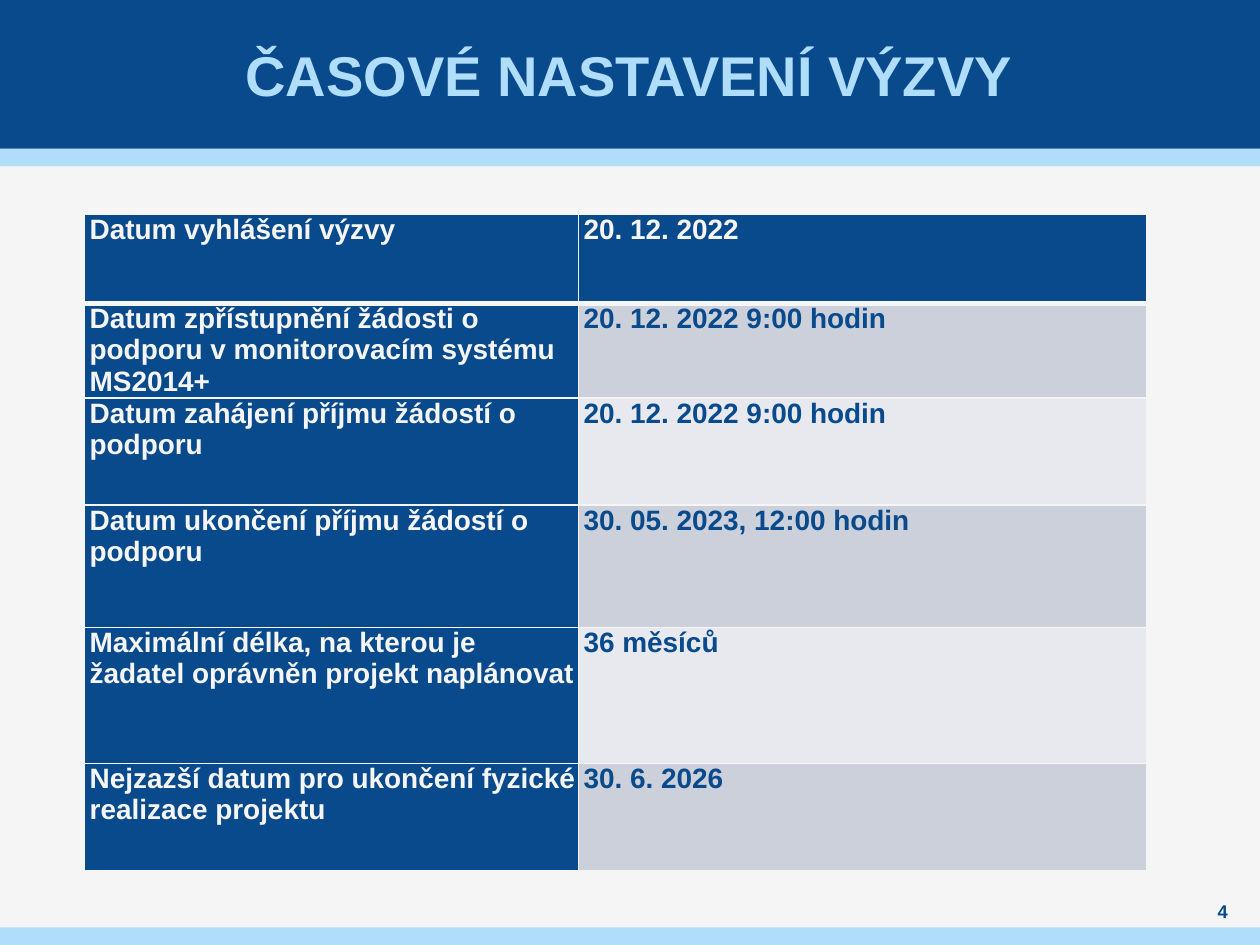
from lxml.etree import SubElement
from pptx import Presentation
from pptx.dml.color import RGBColor
from pptx.enum.shapes import MSO_SHAPE as Shape
from pptx.enum.text import MSO_ANCHOR as Anchor, MSO_AUTO_SIZE as AutoSize, PP_ALIGN as Align
from pptx.oxml.ns import qn
from pptx.util import Pt

NAVY = RGBColor(0x08, 0x4A, 0x8B)
SKY = RGBColor(0xAF, 0xDD, 0xFA)
PAPER = RGBColor(0xF5, 0xF5, 0xF5)
GREY = RGBColor(0xCC, 0xD0, 0xDA)
PALE = RGBColor(0xE7, 0xE9, 0xEE)

WIDTH, HEIGHT = 720, 540
HEADER, STRIPE = 85, 10
COLUMNS = [282.24, 324.72]
ROWS = [
    (51.12, "Datum vyhlášení výzvy", "20. 12. 2022"),
    (54, "Datum zpřístupnění žádosti o podporu v monitorovacím systému MS2014+",
     "20. 12. 2022 9:00 hodin"),
    (61.2, "Datum zahájení příjmu žádostí o podporu", "20. 12. 2022 9:00 hodin"),
    (69.84, "Datum ukončení příjmu žádostí o podporu", "30. 05. 2023, 12:00 hodin"),
    (77.76, "Maximální délka, na kterou je žadatel oprávněn projekt naplánovat", "36 měsíců"),
    (61.2, "Nejzazší datum pro ukončení fyzické realizace projektu", "30. 6. 2026"),
]


class SlideBuilder:
    font = "Arial"

    def __init__(self, page):
        self.page = page
        page.background.fill.solid()
        page.background.fill.fore_color.rgb = PAPER

    def place(self, item, left, top, width, height):
        item.left, item.top = Pt(left), Pt(top)
        item.width, item.height = Pt(width), Pt(height)

    def span(self, para, text, size, color):
        span = para.add_run()
        span.text = text
        span.font.name, span.font.size, span.font.bold = self.font, Pt(size), True
        span.font.color.rgb = color

    def centered(self, box, text, size, color, side=0):
        frame = box.text_frame
        frame.auto_size, frame.word_wrap = AutoSize.NONE, True
        frame.vertical_anchor = Anchor.MIDDLE
        frame.margin_left = frame.margin_right = Pt(side)
        frame.margin_top = frame.margin_bottom = 0
        para = frame.paragraphs[0]
        para.alignment = Align.CENTER
        self.span(para, text, size, color)

    def band(self, top, height, color):
        band = self.page.shapes.add_shape(Shape.RECTANGLE, 0, Pt(top), Pt(WIDTH), Pt(height))
        band.shadow.inherit = False
        band.fill.solid()
        band.fill.fore_color.rgb = color
        band.line.fill.background()

    def title(self, text, *bounds):
        title = self.page.shapes.title
        self.place(title, *bounds)
        self.centered(title, text, 32, SKY, side=3)
        # Bring the title in front of the bands
        title.element.getparent().append(title.element)

    def label(self, text, *bounds):
        box = self.page.shapes.add_textbox(*map(Pt, bounds))
        self.centered(box, text, 10.5, NAVY)

    def borders(self, cell, widths):
        props = cell._tc.get_or_add_tcPr()
        for side, width in widths.items():
            line = SubElement(props, qn(f"a:ln{side}"), w=str(Pt(width)))
            fill = SubElement(line, qn("a:solidFill"))
            SubElement(fill, qn("a:srgbClr"), val=str(PAPER))

    def cell(self, cell, text, fill, color, widths):
        cell.margin_left = cell.margin_right = cell.margin_top = cell.margin_bottom = 0
        self.borders(cell, widths)
        cell.fill.solid()
        cell.fill.fore_color.rgb = fill
        para = cell.text_frame.paragraphs[0]
        para.space_before = para.space_after = Pt(3)
        para._p.get_or_add_pPr().set("marL", str(Pt(3)))
        self.span(para, text, 16, color)

    def table(self, left, top, columns, rows):
        height = sum(row[0] for row in rows)
        table = self.page.shapes.add_table(
            len(rows), len(columns), Pt(left), Pt(top), Pt(sum(columns)), Pt(height)).table
        for column, width in zip(table.columns, columns):
            column.width = Pt(width)
        for r, (row_height, *texts) in enumerate(rows):
            table.rows[r].height = Pt(row_height)
            # The rule under the header row is thicker
            widths = {"L": 1, "R": 1, "T": 3 if r == 1 else 1, "B": 3 if r == 0 else 1}
            for c, text in enumerate(texts):
                if r == 0 or c == 0:
                    fill, color = NAVY, PAPER
                else:
                    fill, color = (GREY if r % 2 else PALE), NAVY
                self.cell(table.cell(r, c), text, fill, color, widths)


def main():
    deck = Presentation()
    deck.slide_width, deck.slide_height = Pt(WIDTH), Pt(HEIGHT)
    builder = SlideBuilder(deck.slides.add_slide(deck.slide_layouts[5]))

    # Header and footer bands
    builder.band(HEADER, STRIPE, SKY)
    builder.band(0, HEADER, NAVY)
    builder.band(HEIGHT - STRIPE, STRIPE, SKY)

    # Title and page number
    builder.title("ČASOVÉ NASTAVENÍ VÝZVY", 28, 0, 663, HEADER)
    builder.label("4", 680.4, 513.4, 36.7, 14.4)

    # Schedule of the call
    builder.table(48.24, 122.4, COLUMNS, ROWS)

    deck.save("out.pptx")


if __name__ == "__main__":
    main()
